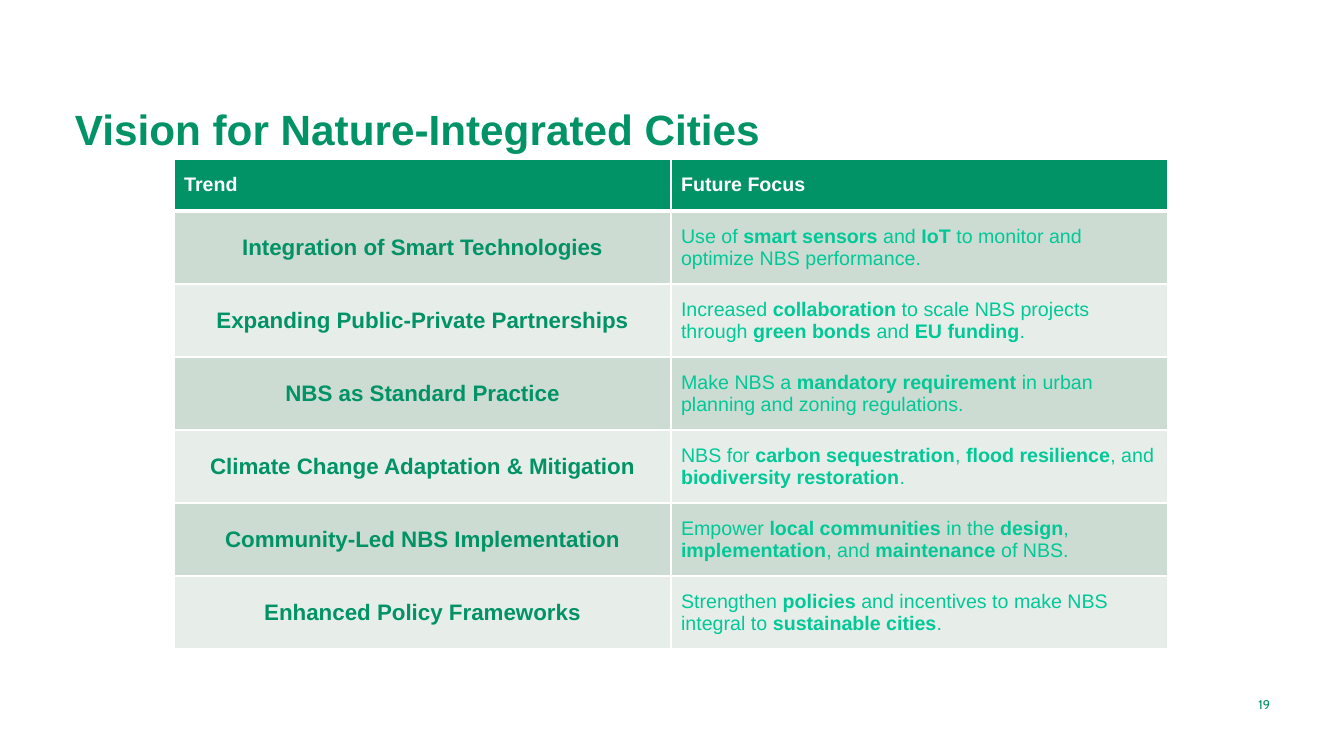
from lxml.etree import SubElement
from pptx import Presentation
from pptx.dml.color import RGBColor
from pptx.enum.text import MSO_ANCHOR, PP_ALIGN
from pptx.oxml.ns import qn
from pptx.util import Inches, Pt

EMU_PER_PX = Inches(1) / 100.8
GREEN = RGBColor(0x01, 0x92, 0x66)
MINT = RGBColor(0x00, 0xC8, 0x97)
WHITE = RGBColor(0xFF, 0xFF, 0xFF)
BAND_DARK = RGBColor(0xCC, 0xDC, 0xD3)
BAND_LIGHT = RGBColor(0xE7, 0xEE, 0xEA)

HEADINGS = ["Trend", "Future Focus"]
TRENDS = [
    ("Integration of Smart Technologies",
     "Use of **smart sensors** and **IoT** to monitor and optimize NBS performance."),
    ("Expanding Public-Private Partnerships",
     "Increased **collaboration** to scale NBS projects through **green bonds** and **EU funding**."),
    ("NBS as Standard Practice",
     "Make NBS a **mandatory requirement** in urban planning and zoning regulations."),
    ("Climate Change Adaptation & Mitigation",
     "NBS for **carbon sequestration**, **flood resilience**, and **biodiversity restoration**."),
    ("Community-Led NBS Implementation",
     "Empower **local communities** in the **design**, **implementation**, and **maintenance** of NBS."),
    ("Enhanced Policy Frameworks",
     "Strengthen **policies** and incentives to make NBS integral to **sustainable cities**."),
]


def px(length):
    return round(length * EMU_PER_PX)


class SlideBuilder:
    def __init__(self, slide, font):
        self.slide = slide
        self.font = font

    def add_spans(self, frame, text, size, color, bold=False, align=PP_ALIGN.LEFT, font=None):
        para = frame.paragraphs[0]
        para.alignment = align
        for index, part in enumerate(text.split("**")):
            if not part:
                continue
            span = para.add_run()
            span.text = part
            span.font.name = font or self.font
            span.font.size = Pt(size)
            span.font.bold = bold or index % 2 == 1
            span.font.color.rgb = color

    def text(self, bounds, text, size, color, anchor, **style):
        box = self.slide.shapes.add_textbox(*map(px, bounds))
        frame = box.text_frame
        frame.word_wrap = True
        frame.vertical_anchor = anchor
        self.add_spans(frame, text, size, color, **style)

    def table(self, left, top, widths, heights):
        frame = self.slide.shapes.add_table(
            len(heights), len(widths), px(left), px(top), px(sum(widths)), px(sum(heights)))
        table = frame.table
        table.horz_banding = False
        for column, width in zip(table.columns, widths):
            column.width = px(width)
        for row, height in zip(table.rows, heights):
            row.height = px(height)
        return table

    def cell(self, cell, text, size, color, fill, top=1, bottom=1, **style):
        properties = cell._tc.get_or_add_tcPr()
        for side, width in (("L", 1), ("R", 1), ("T", top), ("B", bottom)):
            line = SubElement(properties, qn(f"a:ln{side}"), w=str(Pt(width)))
            solid = SubElement(line, qn("a:solidFill"))
            SubElement(solid, qn("a:srgbClr"), val=str(WHITE))
        cell.fill.solid()
        cell.fill.fore_color.rgb = fill
        cell.vertical_anchor = MSO_ANCHOR.MIDDLE
        self.add_spans(cell.text_frame, text, size, color, **style)


def main():
    deck = Presentation()
    deck.slide_width, deck.slide_height = px(1344), px(756)
    page = SlideBuilder(deck.slides.add_slide(deck.slide_layouts[6]), "Arial")

    page.text((65, 107, 773, 52), "Vision for Nature-Integrated Cities", 30.2, GREEN,
              MSO_ANCHOR.BOTTOM, bold=True)
    page.text((1164, 684, 116, 40), "19", 9, GREEN, MSO_ANCHOR.MIDDLE,
              align=PP_ALIGN.RIGHT, font="Cabin")

    table = page.table(174, 159, [497] * 2, [52] + [73] * len(TRENDS))
    for column, heading in enumerate(HEADINGS):
        page.cell(table.cell(0, column), heading, 14, WHITE, GREEN, bottom=3, bold=True)
    for row, (trend, focus) in enumerate(TRENDS, start=1):
        fill = BAND_DARK if row % 2 else BAND_LIGHT
        top = 3 if row == 1 else 1
        page.cell(table.cell(row, 0), trend, 16, GREEN, fill, top=top,
                  bold=True, align=PP_ALIGN.CENTER)
        page.cell(table.cell(row, 1), focus, 14, MINT, fill, top=top)

    deck.save("out.pptx")


if __name__ == "__main__":
    main()
